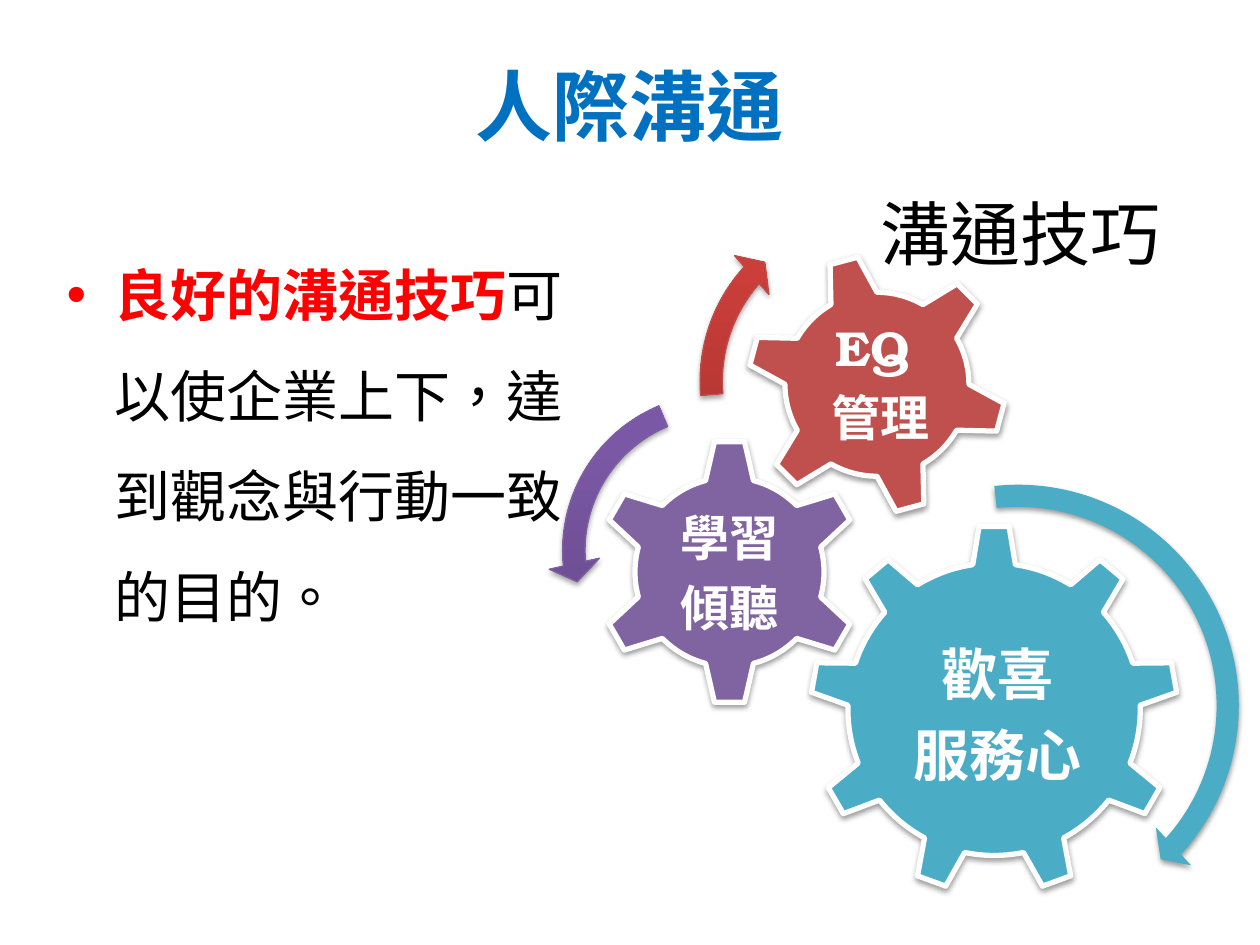
import math

import lxml.etree
import pptx
import pptx.dml.color
import pptx.enum.lang
import pptx.enum.shapes
import pptx.enum.text
import pptx.oxml.ns
import pptx.util

Inches = pptx.util.Inches
Pt = pptx.util.Pt
RGB = pptx.dml.color.RGBColor
SHAPE = pptx.enum.shapes.MSO_SHAPE
ALIGN = pptx.enum.text.PP_ALIGN
ANCHOR = pptx.enum.text.MSO_ANCHOR
FIT = pptx.enum.text.MSO_AUTO_SIZE.SHAPE_TO_FIT_TEXT
qn = pptx.oxml.ns.qn

FONT = "TeX Gyre Bonum"
BLUE = RGB(0x00, 0x70, 0xC0)
RED = RGB(0xFF, 0x00, 0x00)
BLACK = RGB(0x00, 0x00, 0x00)
WHITE = RGB(0xFF, 0xFF, 0xFF)
TEAL = RGB(0x4B, 0xAC, 0xC6)
PURPLE = RGB(0x80, 0x64, 0xA2)
BRICK = RGB(0xC0, 0x50, 0x4D)
PURPLE_EDGE = RGB(0x7D, 0x60, 0xA0)
BRICK_EDGE = RGB(0xBF, 0x4C, 0x48)
PURPLE_FADE = [(0, RGB(0x5F, 0x44, 0x80)), (80, RGB(0x7B, 0x58, 0xA6)),
               (100, RGB(0x7C, 0x57, 0xA8))]
BRICK_FADE = [(0, RGB(0x9C, 0x2F, 0x2D)), (80, RGB(0xCB, 0x3E, 0x3A)),
              (100, RGB(0xCE, 0x3B, 0x37))]


def add_node(parent, tag, **attrs):
    node = lxml.etree.SubElement(parent, qn(tag))
    for key, value in attrs.items():
        node.set(key, str(value))
    return node


def add_run(para, text, size=32, color=BLACK, bold=False):
    run = para.add_run()
    run.text = text
    font = run.font
    font.name = FONT
    font.size = Pt(size)
    font.bold = bold
    font.color.rgb = color
    font.language_id = pptx.enum.lang.MSO_LANGUAGE_ID.TRADITIONAL_CHINESE


def add_box(slide, left, top, width, height):
    box = slide.shapes.add_textbox(Inches(left), Inches(top),
                                   Inches(width), Inches(height))
    box.text_frame.word_wrap = True
    return box.text_frame


def add_title(slide, text):
    title = slide.shapes.title
    title.left, title.top = Inches(0.5), Inches(0.21)
    title.width, title.height = Inches(9), Inches(1.25)
    title.text_frame.vertical_anchor = ANCHOR.MIDDLE
    para = title.text_frame.paragraphs[0]
    para.alignment = ALIGN.CENTER
    add_run(para, text, size=44, color=BLUE, bold=True)


def add_body(slide):
    para = add_box(slide, 0.43, 1.75, 4.19, 4.95).paragraphs[0]
    para.line_spacing = 1.5
    props = para._p.get_or_add_pPr()
    props.set("marL", str(Inches(0.38)))
    props.set("indent", str(Inches(-0.38)))
    add_node(props, "a:buFont", typeface="Arial")
    add_node(props, "a:buChar", char="•")
    add_run(para, "良好的溝通技巧", color=RED, bold=True)
    add_run(para, "可以使企業上下，達到觀念與行動一致的目的。")


def add_label(slide, lines, left, top, height, size):
    frame = add_box(slide, left, top, 2.36, height)
    frame.auto_size = FIT
    for i, line in enumerate(lines):
        para = frame.add_paragraph() if i else frame.paragraphs[0]
        para.alignment = ALIGN.CENTER
        para.line_spacing = 0.9
        para.space_after = Pt(size * 0.35)
        add_run(para, line, size=size, color=WHITE, bold=True)


def cast_shadow(shape, dist, alpha):
    shape.shadow.inherit = False
    effects = shape._element.spPr.find(qn("a:effectLst"))
    shadow = add_node(effects, "a:outerShdw", blurRad=Pt(3.1), dist=Pt(dist),
                      dir=5400000, rotWithShape=0)
    color = add_node(shadow, "a:srgbClr", val=BLACK)
    add_node(color, "a:alpha", val=alpha * 1000)


def bend_line(line, handles):
    """Turn a straight segment into a curve with the given handles."""
    line.tag = qn("a:cubicBezTo")
    for i, (x, y) in enumerate(handles):
        point = line.makeelement(qn("a:pt"), {"x": str(x), "y": str(y)})
        line.insert(i, point)


def add_gear(slide, x, y, teeth, turn, tip, root, color):
    """Draw a gear; tip and root are (radius, half angle of a tooth)."""
    def polar(radius, angle):
        turned = math.radians(angle)
        return (Inches(x + radius * math.sin(turned)),
                Inches(y - radius * math.cos(turned)))

    pitch = 360 / teeth
    mids = [turn + i * pitch for i in range(teeth)]
    points = [polar(radius, mid + side * half) for mid in mids
              for (radius, half), side in
              ((root, -1), (tip, -1), (tip, 1), (root, 1))]
    outline = slide.shapes.build_freeform(*points[0])
    outline.add_line_segments(points[1:] + points[:1], close=True)
    gear = outline.convert_to_shape()

    # Handles of the arc between two teeth lie on its tangents.
    gap = math.radians(pitch - 2 * root[1])
    reach = 4 / 3 * math.tan(gap / 4)
    lean = math.degrees(math.atan(reach))
    far = root[0] * math.hypot(1, reach)
    lines = list(gear._element.spPr.iter(qn("a:lnTo")))
    for mid, line in zip(mids, lines[3::4]):
        ends = (mid + root[1] + lean, mid + pitch - root[1] - lean)
        handles = [polar(far, end) for end in ends]
        bend_line(line, [(px - gear.left, py - gear.top)
                         for px, py in handles])

    gear.fill.solid()
    gear.fill.fore_color.rgb = color
    gear.line.color.rgb = WHITE
    gear.line.width = Pt(3)
    cast_shadow(gear, 1.6, 38)


def add_arrow(slide, kind, left, top, size, band, angles, head):
    """Add a curved arrow; band and head are percent, angles are degrees."""
    arrow = slide.shapes.add_shape(kind, Inches(left), Inches(top),
                                   Inches(size), Inches(size))
    turns = [angle * 0.6 for angle in angles]
    for i, value in enumerate([band / 100, *turns, head / 100]):
        arrow.adjustments[i] = value
    return arrow


def paint_flat(arrow, color):
    arrow.fill.solid()
    arrow.fill.fore_color.rgb = color
    arrow.line.fill.background()
    cast_shadow(arrow, 1.6, 38)


def paint_fade(arrow, fade, edge):
    arrow.fill.gradient()
    arrow.fill.gradient_angle = 90
    stops = arrow._element.spPr.find(qn("a:gradFill")).find(qn("a:gsLst"))
    for stop in list(stops):
        stops.remove(stop)
    for place, color in fade:
        stop = add_node(stops, "a:gs", pos=place * 1000)
        add_node(stop, "a:srgbClr", val=color)
    arrow.line.color.rgb = edge
    arrow.line.width = Pt(0.75)
    cast_shadow(arrow, 1.8, 35)


def main():
    deck = pptx.Presentation()
    deck.slide_width, deck.slide_height = Inches(10), Inches(7.5)
    slide = deck.slides.add_slide(deck.slide_layouts[5])

    add_title(slide, "人際溝通")
    add_body(slide)

    add_gear(slide, 7.89, 5.63, 9, 0, (1.455, 4.7), (1.16, 8.4), TEAL)
    add_gear(slide, 5.79, 4.54, 6, 0, (1.04, 6.6), (0.75, 14.7), PURPLE)
    add_gear(slide, 6.96, 3.05, 6, 45, (1.02, 6.4), (0.73, 15), BRICK)

    paint_flat(add_arrow(slide, SHAPE.CIRCULAR_ARROW, 6.21, 3.73, 3.74,
                         4.7, (4.98, 42.17, 263.86), 5.5), TEAL)
    paint_fade(add_arrow(slide, SHAPE.LEFT_CIRCULAR_ARROW, 4.35, 3.01, 2.72,
                         6.5, (7.17, 174.82, 247.3), 7.5),
               PURPLE_FADE, PURPLE_EDGE)
    paint_fade(add_arrow(slide, SHAPE.CIRCULAR_ARROW, 5.44, 1.56, 2.93,
                         6, (6.57, 221.9, 175.14), 7),
               BRICK_FADE, BRICK_EDGE)

    add_label(slide, ["歡喜", "服務心"], 6.74, 5.09, 1.26, size=32)
    add_label(slide, ["學習", "傾聽"], 4.61, 4.03, 1.11, size=28)
    add_label(slide, ["EQ ", "管理"], 5.81, 2.52, 1.11, size=28)
    heading = add_box(slide, 6.89, 1.46, 2.44, 0.77)
    heading.auto_size = FIT
    add_run(heading.paragraphs[0], "溝通技巧", size=40)

    deck.save("out.pptx")


if __name__ == "__main__":
    main()
